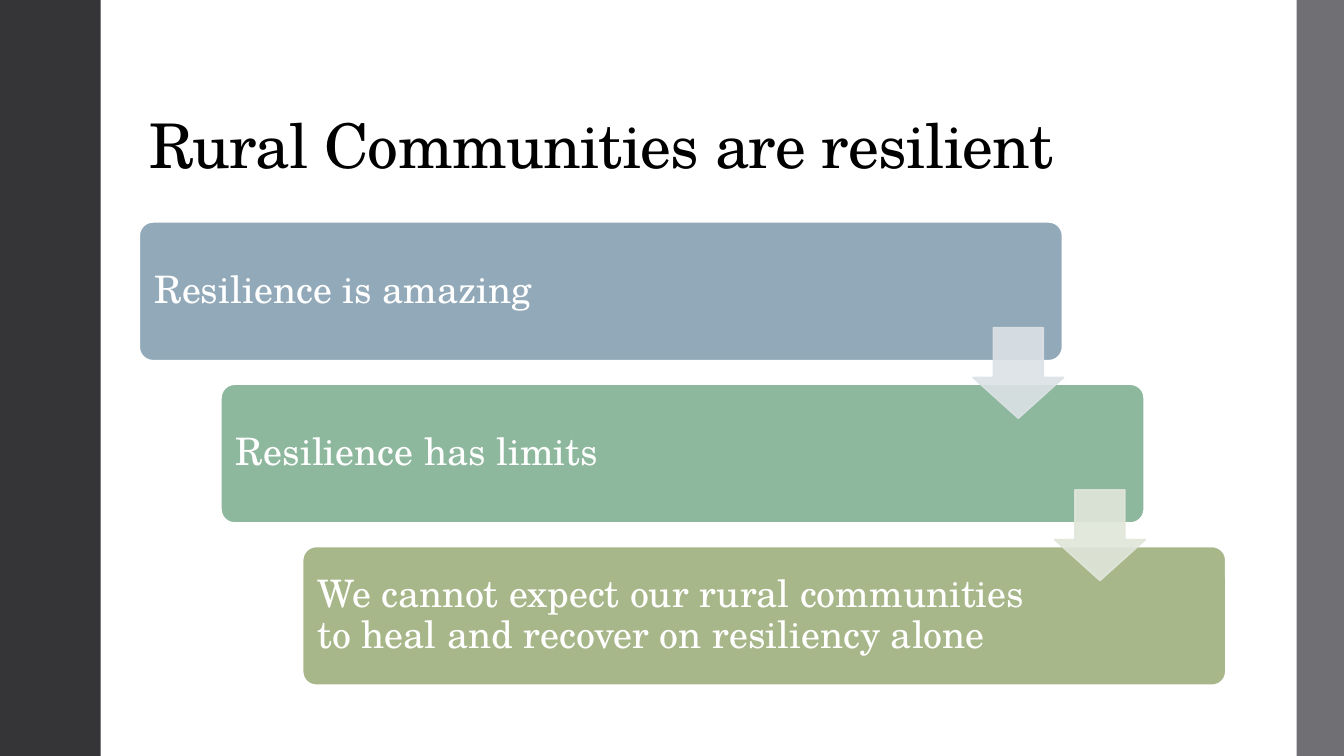
from lxml import etree
from pptx import Presentation
from pptx import util as u
from pptx.dml.color import RGBColor
from pptx.enum import shapes, text
from pptx.oxml.ns import qn

TITLE = "Rural Communities are resilient"
STEPS = [
    ("Resilience is amazing", "92A9B9", "DCE2E6"),
    ("Resilience has limits", "8EB89E", "E1E6DA"),
    ("We cannot expect our rural communities to heal and recover on resiliency alone", "A7B789", None),
]
BANDS = [(0, 1, "353537"), (12.86, 0.47, "6F6F74")]

WIDTH, HEIGHT = 13.33, 7.5
FONT = "TeX Gyre Schola"
LEFT, TOP = 1.38, 2.2
CARD_WIDTH, CARD_HEIGHT = 9.16, 1.38
STEP_X, STEP_Y = 0.81, 1.61
ARROW_SIZE = 0.9
ARROW_X, ARROW_Y = CARD_WIDTH - 0.89, 1.05
FRAME_FORMAT = {"word_wrap": True, "auto_size": text.MSO_AUTO_SIZE.NONE}
CARD_FRAME = {
    "vertical_anchor": text.MSO_ANCHOR.MIDDLE,
    "margin_left": u.Inches(0.11),
    "margin_right": u.Inches(1.81),
    "margin_top": u.Inches(0.11),
    "margin_bottom": u.Inches(0.11),
}
PARA_FORMAT = {"alignment": text.PP_ALIGN.LEFT, "line_spacing": 0.9}


def color(value):
    return RGBColor.from_string(value)


def apply(target, values):
    for name, value in values.items():
        setattr(target, name, value)


def add_box(slide, kind, place, fill, line=None, line_width=0, adjustments=()):
    box = slide.shapes.add_shape(kind, *map(u.Inches, place))
    box.shadow.inherit = False
    box.fill.solid()
    box.fill.fore_color.rgb = color(fill)
    if line:
        box.line.color.rgb = color(line)
        box.line.width = u.Pt(line_width)
    else:
        box.line.fill.background()
    for index, value in enumerate(adjustments):
        box.adjustments[index] = value
    return box


def write(box, words, size, ink, frame_format):
    frame = box.text_frame
    apply(frame, {**FRAME_FORMAT, **frame_format})
    para = frame.paragraphs[0]
    apply(para, PARA_FORMAT)
    span = para.add_run()
    span.text = words
    apply(span.font, {"name": FONT, "size": u.Pt(size)})
    span.font.color.rgb = color(ink)
    return span


def make_translucent(box, percent):
    for tint in box._element.spPr.iter(qn("a:srgbClr")):
        etree.SubElement(tint, qn("a:alpha")).set("val", str(percent * 1000))


def main():
    deck = Presentation()
    deck.slide_width, deck.slide_height = u.Inches(WIDTH), u.Inches(HEIGHT)
    slide = deck.slides.add_slide(deck.slide_layouts[5])
    slide.background.fill.solid()
    slide.background.fill.fore_color.rgb = color("FFFFFF")

    title = slide.shapes.title
    apply(title, dict(zip(("left", "top", "width", "height"), map(u.Inches, (LEFT, 0.4, 10.78, 1.45)))))
    span = write(title, TITLE, 44, "000000", {"vertical_anchor": text.MSO_ANCHOR.BOTTOM})
    span.font._element.set("spc", "-50")

    kinds = shapes.MSO_SHAPE
    for left, width, fill in BANDS:
        add_box(slide, kinds.RECTANGLE, (left, 0, width, HEIGHT), fill)

    corners = [(LEFT + index * STEP_X, TOP + index * STEP_Y) for index in range(len(STEPS))]
    for (left, top), (words, fill, _) in zip(corners, STEPS):
        card = add_box(slide, kinds.ROUNDED_RECTANGLE, (left, top, CARD_WIDTH, CARD_HEIGHT),
                       fill, "FFFFFF", 1.35, [0.1])
        write(card, words, 27, "FFFFFF", CARD_FRAME)

    for (left, top), (_, _, tint) in zip(corners, STEPS):
        if tint:
            arrow = add_box(slide, kinds.DOWN_ARROW, (left + ARROW_X, top + ARROW_Y, ARROW_SIZE, ARROW_SIZE),
                            tint, tint, 1.1, [0.55, 0.45])
            make_translucent(arrow, 90)

    deck.save("out.pptx")


if __name__ == "__main__":
    main()
